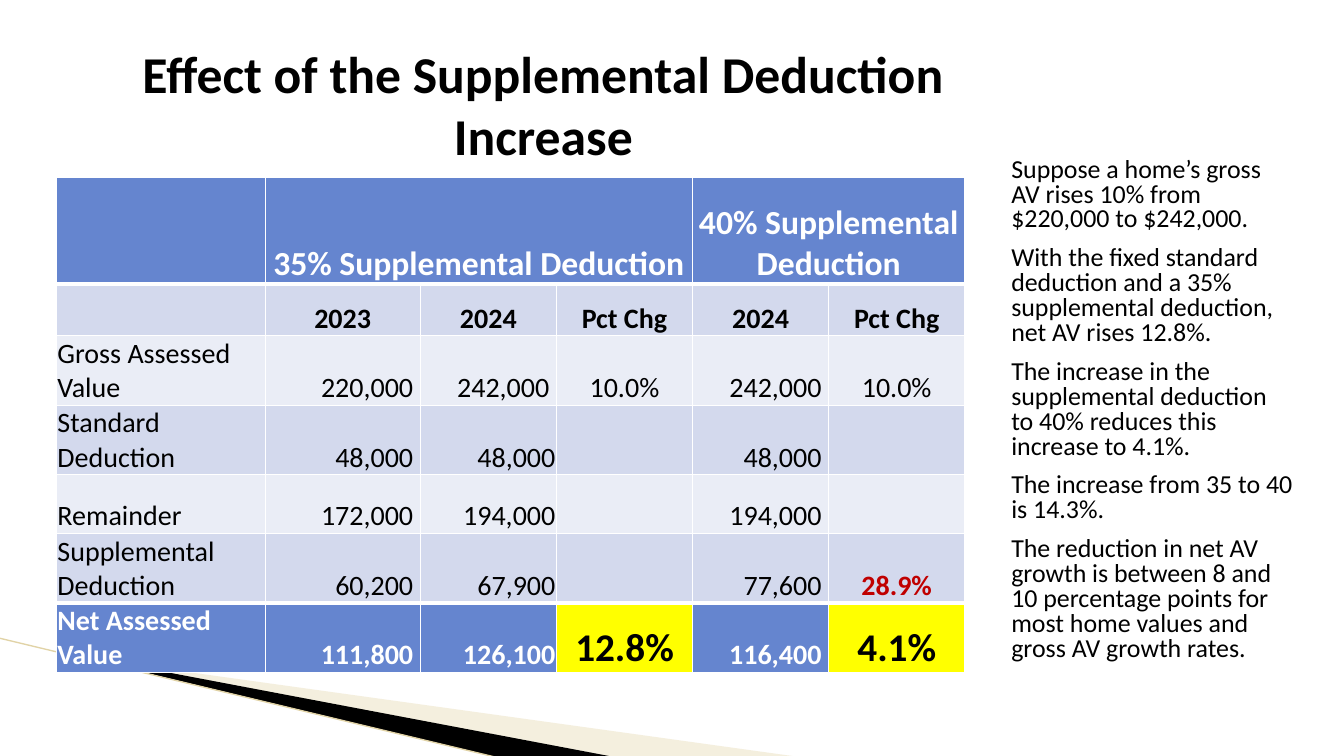
from dataclasses import dataclass, replace

from lxml import etree
from pptx import Presentation
from pptx.dml.color import RGBColor
from pptx.enum.shapes import MSO_CONNECTOR
from pptx.enum.text import MSO_ANCHOR, MSO_AUTO_SIZE, PP_ALIGN
from pptx.oxml.ns import qn
from pptx.util import Inches, Pt

LEFT, CENTER, RIGHT = PP_ALIGN.LEFT, PP_ALIGN.CENTER, PP_ALIGN.RIGHT
BOTTOM, MIDDLE, TOP = MSO_ANCHOR.BOTTOM, MSO_ANCHOR.MIDDLE, MSO_ANCHOR.TOP
NO_AUTOFIT = MSO_AUTO_SIZE.NONE
STRAIGHT = MSO_CONNECTOR.STRAIGHT

BLACK = RGBColor(0x00, 0x00, 0x00)
WHITE = RGBColor(0xFF, 0xFF, 0xFF)
BLUE = RGBColor(0x65, 0x85, 0xCF)
BAND_DARK = RGBColor(0xD3, 0xD9, 0xED)
BAND_LIGHT = RGBColor(0xEA, 0xED, 0xF6)
YELLOW = RGBColor(0xFF, 0xFF, 0x00)
RED = RGBColor(0xC0, 0x00, 0x00)
SAND = RGBColor(0xE4, 0xD7, 0xAD)
SAND_LINE = RGBColor(0xE1, 0xD3, 0xA6)
FONT = "Calibri"


@dataclass(frozen=True)
class CellFormat:
    fill: RGBColor
    color: RGBColor = BLACK
    size: float = 20
    bold: bool = False
    align: PP_ALIGN = CENTER
    right_inset: float = 0.01


@dataclass(frozen=True)
class Wedge:
    points: tuple
    color: RGBColor
    opacity: int


WEDGES = (
    Wedge(((0.73, 6.51), (7.93, 7.51), (6.08, 7.51), (0.73, 6.5)), SAND, 40),
    Wedge(((0.71, 6.49), (6.09, 7.51), (4.96, 7.52), (0.72, 6.5)), BLACK, 100),
)
TITLE = "Effect of the Supplemental Deduction Increase"
COLUMN_WIDTHS = (2.07, 1.54, 1.35, 1.35, 1.35, 1.35)
ROW_HEIGHTS = (1.06, 0.51, 0.58, 0.58, 0.58, 0.58, 0.58)
ROWS = (
    ("", "35% Supplemental Deduction", "", "", "40% Supplemental Deduction", ""),
    ("", "2023", "2024", "Pct Chg", "2024", "Pct Chg"),
    ("Gross Assessed Value", "220,000", "242,000", "10.0%", "242,000", "10.0%"),
    ("Standard Deduction", "48,000", "48,000", "", "48,000", ""),
    ("Remainder", "172,000", "194,000", "", "194,000", ""),
    ("Supplemental Deduction", "60,200", "67,900", "", "77,600", "28.9%"),
    ("Net Assessed Value", "111,800", "126,100", "12.8%", "116,400", "4.1%"),
)
HEADER_ROW, YEAR_ROW, GROSS_ROW, SUPPLEMENTAL_ROW, NET_ROW = 0, 1, 2, 5, 6
HEADER_SPANS = ((1, 3), (4, 5))
PERCENT_COLUMNS = (3, 5)
NOTES = (
    "Suppose a home’s gross AV rises 10% from $220,000 to $242,000.",
    "With the fixed standard deduction and a 35% supplemental deduction, net AV rises 12.8%.",
    "The increase in the supplemental deduction to 40% reduces this increase to 4.1%.",
    "The increase from 35 to 40 is 14.3%.",
    "The reduction in net AV growth is between 8 and 10 percentage points for "
    "most home values and gross AV growth rates.",
)


def set_values(target, values: dict) -> None:
    for name, value in values.items():
        setattr(target, name, value)


def set_font(font, size: float, color: RGBColor, bold: bool) -> None:
    set_values(font, {"name": FONT, "size": Pt(size), "bold": bold})
    font.color.rgb = color


def place(shape, left: float, top: float, width: float, height: float) -> None:
    set_values(shape, {"left": Inches(left), "top": Inches(top),
                       "width": Inches(width), "height": Inches(height)})


def draw_wedge(slide, wedge: Wedge) -> None:
    points = [(Inches(x), Inches(y)) for x, y in wedge.points]
    builder = slide.shapes.build_freeform(*points[0], scale=1.0)
    builder.add_line_segments(points[1:], close=True)
    shape = builder.convert_to_shape()
    shape.shadow.inherit = False
    shape.line.fill.background()
    shape.fill.solid()
    shape.fill.fore_color.rgb = wedge.color
    if wedge.opacity < 100:
        color = shape._element.spPr.find(qn("a:solidFill"))[0]
        etree.SubElement(color, qn("a:alpha"), val=str(wedge.opacity * 1000))


def draw_line(slide) -> None:
    line = slide.shapes.add_connector(
        STRAIGHT, Inches(-0.01), Inches(6.33), Inches(4.95), Inches(7.52))
    line.line.color.rgb = SAND_LINE
    line.line.width = Pt(0.95)
    etree.SubElement(line._element.spPr, qn("a:effectLst"))


def cell_format(row: int, column: int) -> CellFormat:
    if row == HEADER_ROW:
        return CellFormat(BLUE, WHITE, 24, True)
    if row == YEAR_ROW:
        return CellFormat(BAND_DARK, bold=True)
    if row == NET_ROW:
        base = CellFormat(BLUE, WHITE, bold=True)
    else:
        base = CellFormat(BAND_DARK if row % 2 else BAND_LIGHT)
    if column in PERCENT_COLUMNS:
        if row == NET_ROW:
            return CellFormat(YELLOW, size=28, bold=True)
        if row == SUPPLEMENTAL_ROW:
            return replace(base, color=RED, bold=True)
        return base
    if column == 0:
        return replace(base, align=LEFT)
    padded = column != 2 or row == GROSS_ROW
    return replace(base, align=RIGHT, right_inset=0.07 if padded else 0.01)


def add_borders(cell, row: int) -> None:
    properties = cell._tc.get_or_add_tcPr()
    widths = {"lnL": 1, "lnR": 1,
              "lnT": 3 if row in (YEAR_ROW, NET_ROW) else 1,
              "lnB": 3 if row in (HEADER_ROW, SUPPLEMENTAL_ROW) else 1}
    for side, width in widths.items():
        border = etree.SubElement(properties, qn(f"a:{side}"), w=str(Pt(width)))
        fill = etree.SubElement(border, qn("a:solidFill"))
        etree.SubElement(fill, qn("a:srgbClr"), val=str(WHITE))


def fill_cell(cell, row: int, column: int) -> None:
    style = cell_format(row, column)
    add_borders(cell, row)
    cell.fill.solid()
    cell.fill.fore_color.rgb = style.fill
    set_values(cell, {"vertical_anchor": BOTTOM, "margin_left": Inches(0.01),
                      "margin_top": Inches(0.01), "margin_bottom": 0,
                      "margin_right": Inches(style.right_inset)})
    paragraph = cell.text_frame.paragraphs[0]
    paragraph.alignment = style.align
    if ROWS[row][column]:
        run = paragraph.add_run()
        run.text = ROWS[row][column]
        set_font(run.font, style.size, style.color, style.bold)


def draw_table(slide) -> None:
    table = slide.shapes.add_table(
        len(ROWS), len(COLUMN_WIDTHS), Inches(0.56), Inches(1.76),
        Inches(sum(COLUMN_WIDTHS)), Inches(sum(ROW_HEIGHTS))).table
    set_values(table, {"first_row": False, "horz_banding": False})
    for column, width in zip(table.columns, COLUMN_WIDTHS):
        column.width = Inches(width)
    for row, height in zip(table.rows, ROW_HEIGHTS):
        row.height = Inches(height)
    for first, last in HEADER_SPANS:
        table.cell(HEADER_ROW, first).merge(table.cell(HEADER_ROW, last))
    for row in range(len(ROWS)):
        for column in range(len(COLUMN_WIDTHS)):
            fill_cell(table.cell(row, column), row, column)


def write_title(title) -> None:
    place(title, 0.4, 0.31, 9.98, 1.45)
    frame = title.text_frame
    frame.text = TITLE
    set_values(frame, {"word_wrap": True, "auto_size": NO_AUTOFIT, "vertical_anchor": MIDDLE})
    frame.paragraphs[0].alignment = CENTER
    set_font(frame.paragraphs[0].runs[0].font, 36.9, BLACK, True)


def write_notes(body) -> None:
    place(body, 9.93, 1.52, 3, 5.34)
    frame = body.text_frame
    set_values(frame, {"word_wrap": True, "auto_size": NO_AUTOFIT, "vertical_anchor": TOP})
    for index, note in enumerate(NOTES):
        paragraph = frame.add_paragraph() if index else frame.paragraphs[0]
        properties = paragraph._p.get_or_add_pPr()
        set_values(paragraph, {"alignment": LEFT, "line_spacing": 0.8,
                               "space_before": Pt(10 if index else 0)})
        properties.set("marL", "0")
        properties.set("indent", "0")
        etree.SubElement(properties, qn("a:buNone"))
        run = paragraph.add_run()
        run.text = note
        set_font(run.font, 18.5, BLACK, False)


def main() -> None:
    presentation = Presentation()
    presentation.slide_width = Inches(13.33)
    presentation.slide_height = Inches(7.5)
    slide = presentation.slides.add_slide(presentation.slide_layouts[1])
    # Corner decoration
    for wedge in WEDGES:
        draw_wedge(slide, wedge)
    draw_line(slide)
    # Deduction table
    draw_table(slide)
    # Title and side notes
    write_title(slide.shapes.title)
    write_notes(slide.placeholders[1])
    presentation.save("out.pptx")


if __name__ == "__main__":
    main()
